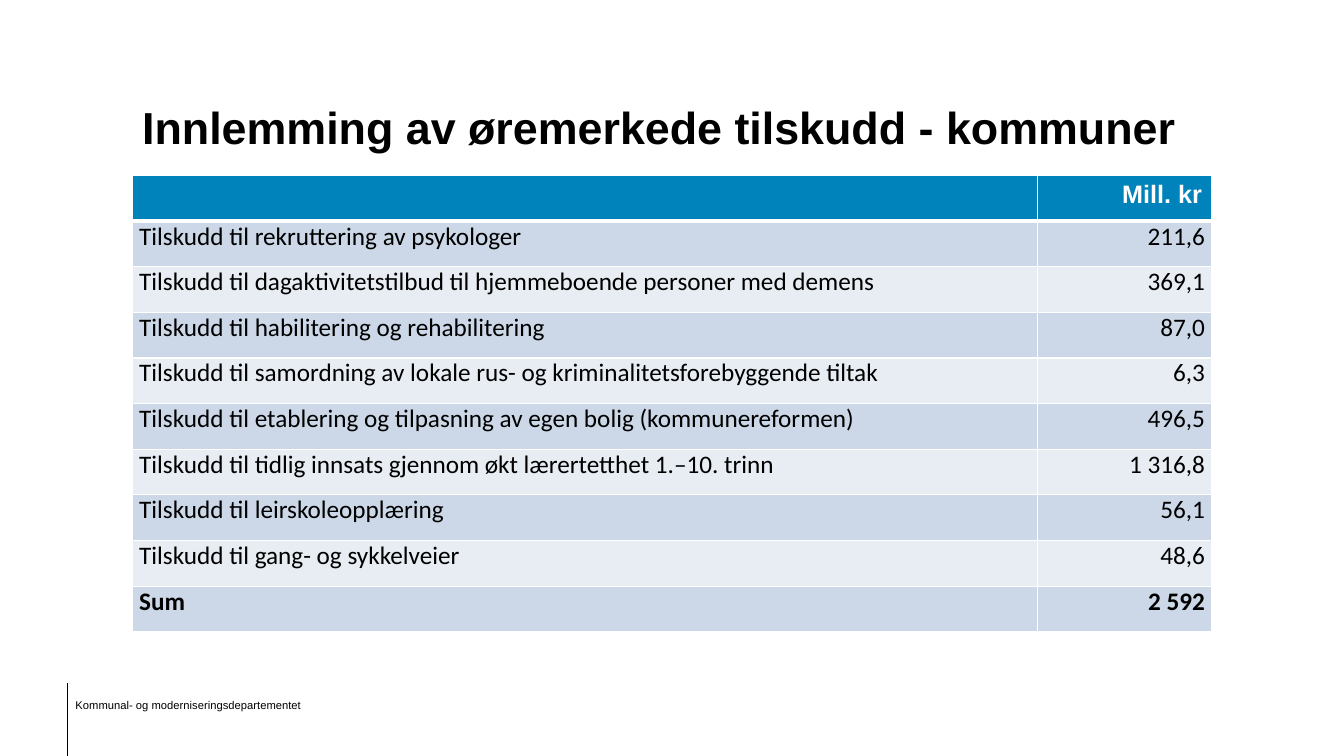
"""Build the slide on earmarked grants moved into the municipal block grant."""
from dataclasses import dataclass

from lxml import etree
from pptx import Presentation
from pptx.dml.color import RGBColor
from pptx.enum.shapes import MSO_CONNECTOR
from pptx.enum.text import MSO_ANCHOR, MSO_AUTO_SIZE, PP_ALIGN
from pptx.oxml.ns import qn
from pptx.util import Inches, Pt

STRAIGHT = MSO_CONNECTOR.STRAIGHT
BOTTOM, TOP = MSO_ANCHOR.BOTTOM, MSO_ANCHOR.TOP
NO_FIT = MSO_AUTO_SIZE.NONE
LEFT, RIGHT = PP_ALIGN.LEFT, PP_ALIGN.RIGHT

BLACK = RGBColor(0x00, 0x00, 0x00)
WHITE = RGBColor(0xFF, 0xFF, 0xFF)
HEADER_BLUE = RGBColor(0x00, 0x82, 0xBA)
BAND_COLOURS = (RGBColor(0xCC, 0xD8, 0xE7), RGBColor(0xE7, 0xED, 0xF3))

SLIDE_WIDTH, SLIDE_HEIGHT = Inches(13.33), Inches(7.5)
TITLE_ONLY_LAYOUT = 5


@dataclass(frozen=True)
class Area:
    """A rectangle in percent of the slide's width and height."""
    left: float
    top: float
    width: float
    height: float

    def lengths(self) -> tuple[int, int, int, int]:
        """Return left, top, width and height as slide lengths."""
        return (across(self.left), down(self.top), across(self.width), down(self.height))


@dataclass(frozen=True)
class Grant:
    """A table row with its amount in million kroner."""
    name: str
    amount: str
    bold: bool = False


TITLE_AREA = Area(9.83, 4.27, 80.35, 16.67)
TABLE_AREA = Area(9.83, 23.2, 80.35, 60.4)
FOOTER_AREA = Area(4.88, 91.87, 21.23, 2.93)
RULE_LEFT, RULE_TOP = 5.03, 90.4
COLUMN_WIDTHS = (67.37, 12.98)

GRANTS = (
    Grant("Tilskudd til rekruttering av psykologer", "211,6"),
    Grant("Tilskudd til dagaktivitetstilbud til hjemmeboende personer med demens", "369,1"),
    Grant("Tilskudd til habilitering og rehabilitering", "87,0"),
    Grant("Tilskudd til samordning av lokale rus- og kriminalitetsforebyggende tiltak", "6,3"),
    Grant("Tilskudd til etablering og tilpasning av egen bolig (kommunereformen)", "496,5"),
    Grant("Tilskudd til tidlig innsats gjennom økt lærertetthet 1.–10. trinn", "1 316,8"),
    Grant("Tilskudd til leirskoleopplæring", "56,1"),
    Grant("Tilskudd til gang- og sykkelveier", "48,6"),
    Grant("Sum", "2 592", bold=True),
)


def across(percent: float) -> int:
    """Return a share of the slide's width."""
    return round(SLIDE_WIDTH * percent / 100)


def down(percent: float) -> int:
    """Return a share of the slide's height."""
    return round(SLIDE_HEIGHT * percent / 100)


def set_font(paragraph, name: str, size: float, colour: RGBColor, bold: bool = False) -> None:
    """Format all the text of a paragraph."""
    font = paragraph.font
    font.name, font.size, font.bold = name, Pt(size), bold
    font.color.rgb = colour


def add_title(slide, text: str) -> None:
    """Place and fill the title placeholder."""
    title = slide.shapes.title
    title.left, title.top, title.width, title.height = TITLE_AREA.lengths()
    frame = title.text_frame
    frame.text = text
    frame.word_wrap = True
    frame.auto_size = NO_FIT
    frame.vertical_anchor = BOTTOM
    paragraph = frame.paragraphs[0]
    paragraph.alignment = LEFT
    set_font(paragraph, "Arial", 32, BLACK, bold=True)


def add_footer(slide, text: str) -> None:
    """Add the department name and the rule on its left."""
    rule = slide.shapes.add_connector(
        STRAIGHT, across(RULE_LEFT), down(RULE_TOP), across(RULE_LEFT), SLIDE_HEIGHT)
    rule.line.color.rgb = BLACK
    rule.line.width = Pt(0.75)
    etree.SubElement(rule.element.spPr, qn("a:effectLst"))

    frame = slide.shapes.add_textbox(*FOOTER_AREA.lengths()).text_frame
    frame.word_wrap = True
    frame.text = text
    paragraph = frame.paragraphs[0]
    paragraph.line_spacing = 0.9
    set_font(paragraph, "Arial", 8, BLACK)


def add_borders(cell, bottom_width: float) -> None:
    """Give a cell thin white borders and a chosen bottom border."""
    properties = cell._tc.get_or_add_tcPr()
    for side, width in (("L", 1), ("R", 1), ("T", 1), ("B", bottom_width)):
        line = etree.SubElement(properties, qn(f"a:ln{side}"), w=str(Pt(width)))
        fill = etree.SubElement(line, qn("a:solidFill"))
        etree.SubElement(fill, qn("a:srgbClr"), val=str(WHITE))


def style_cell(cell, fill: RGBColor, bottom_width: float = 1) -> None:
    """Set the borders, fill and anchor of a cell."""
    add_borders(cell, bottom_width)
    cell.fill.solid()
    cell.fill.fore_color.rgb = fill
    cell.vertical_anchor = TOP


def fill_header(table) -> None:
    """Fill the header row."""
    for column, (text, alignment) in enumerate((("", LEFT), ("Mill. kr", RIGHT))):
        cell = table.cell(0, column)
        cell.text = text
        style_cell(cell, HEADER_BLUE, bottom_width=3)
        paragraph = cell.text_frame.paragraphs[0]
        paragraph.alignment = alignment
        set_font(paragraph, "Arial", 18, WHITE, bold=True)


def fill_grant(table, row: int, grant: Grant) -> None:
    """Fill one row with a grant and its amount."""
    band = BAND_COLOURS[(row - 1) % len(BAND_COLOURS)]
    for column, (text, alignment) in enumerate(((grant.name, LEFT), (grant.amount, RIGHT))):
        cell = table.cell(row, column)
        cell.text = text
        style_cell(cell, band)
        cell.margin_left = cell.margin_right = Inches(0.07)
        cell.margin_top = cell.margin_bottom = 0
        paragraph = cell.text_frame.paragraphs[0]
        paragraph.alignment = alignment
        paragraph.space_after = Pt(6)
        set_font(paragraph, "Calibri", 18, BLACK, grant.bold)


def add_grant_table(slide) -> None:
    """Add the table of grants."""
    table = slide.shapes.add_table(
        len(GRANTS) + 1, len(COLUMN_WIDTHS), *TABLE_AREA.lengths()).table
    for column, width in zip(table.columns, COLUMN_WIDTHS):
        column.width = across(width)
    fill_header(table)
    for row, grant in enumerate(GRANTS, start=1):
        fill_grant(table, row, grant)


def main() -> None:
    """Build and save the deck."""
    deck = Presentation()
    deck.slide_width, deck.slide_height = SLIDE_WIDTH, SLIDE_HEIGHT
    page = deck.slides.add_slide(deck.slide_layouts[TITLE_ONLY_LAYOUT])
    add_footer(page, "Kommunal- og moderniseringsdepartementet")
    add_title(page, "Innlemming av øremerkede tilskudd - kommuner")
    add_grant_table(page)
    deck.save("out.pptx")


if __name__ == "__main__":
    main()
